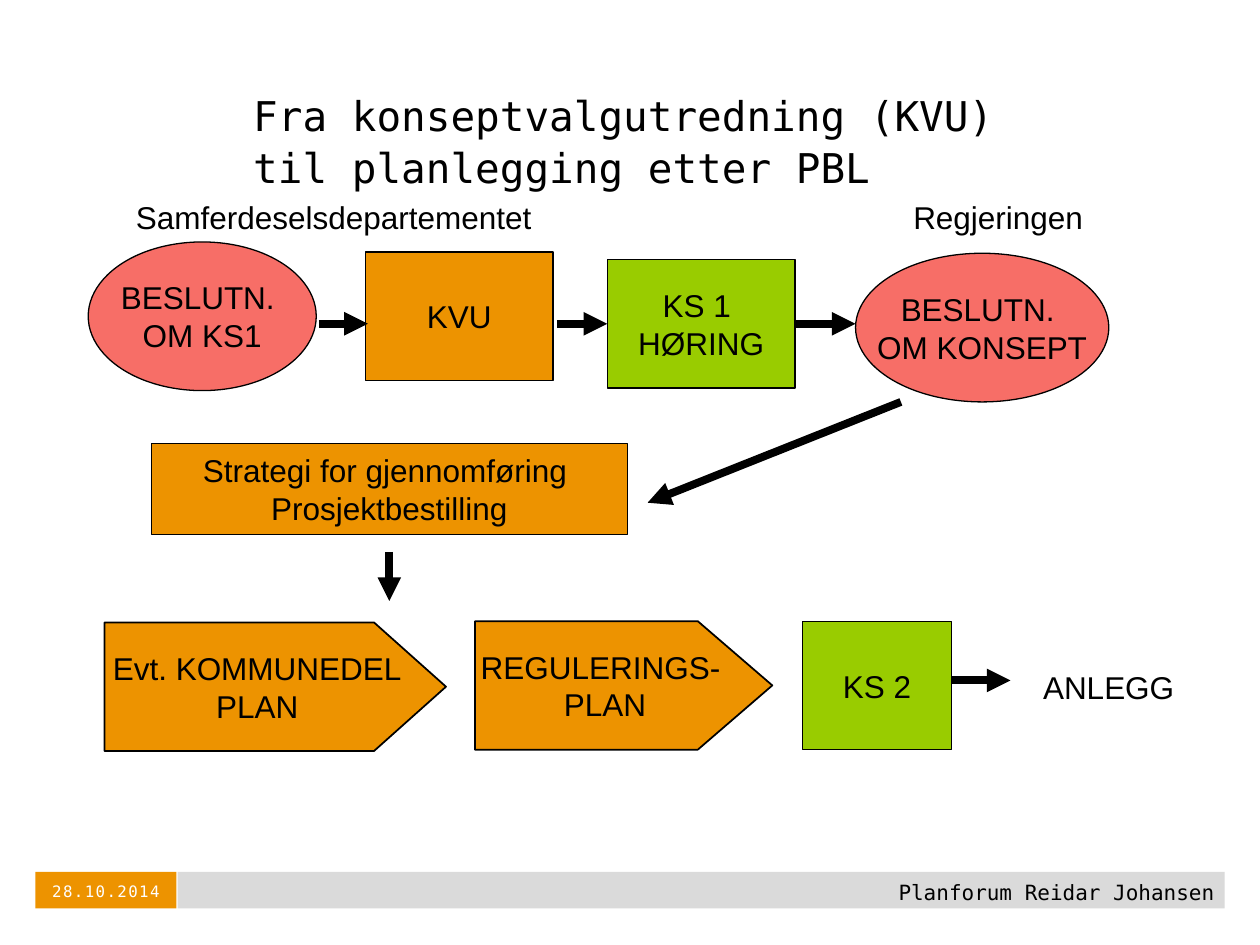
from lxml.etree import SubElement
from pptx import Presentation
from pptx.dml.color import RGBColor
from pptx.enum.shapes import MSO_CONNECTOR, MSO_SHAPE
from pptx.enum.text import MSO_ANCHOR, PP_ALIGN
from pptx.oxml.ns import qn
from pptx.util import Inches, Pt

BLACK = RGBColor(0x00, 0x00, 0x00)
WHITE = RGBColor(0xFF, 0xFF, 0xFF)
GREY = RGBColor(0xDA, 0xDA, 0xDA)
ORANGE = RGBColor(0xED, 0x93, 0x00)
GREEN = RGBColor(0x99, 0xCC, 0x00)
RED = RGBColor(0xF7, 0x6E, 0x67)
MONO = "DejaVu Sans Mono"


class Deck:
    body = {"name": "Arial", "size": Pt(18)}

    def __init__(self, s):
        self.s = s

    def set_text(self, sp, lines, align, color=BLACK, wrap=False, spacing=None, **font):
        tf = sp.text_frame
        tf.word_wrap = wrap
        for i, line in enumerate(lines):
            p = tf.add_paragraph() if i else tf.paragraphs[0]
            p.alignment = align
            if spacing:
                p.line_spacing = spacing
            r = p.add_run()
            r.text = line
            for key, value in {**self.body, **font}.items():
                setattr(r.font, key, value)
            r.font.color.rgb = color
        return tf

    def shape(self, kind, box, fill, lines=(), line=0.75, adj=None):
        sp = self.s.shapes.add_shape(kind, *map(Inches, box))
        sp.shadow.inherit = False
        sp.fill.solid()
        sp.fill.fore_color.rgb = fill
        if line:
            sp.line.color.rgb = BLACK
            sp.line.width = Pt(line)
        else:
            sp.line.fill.background()
        if adj:
            sp.adjustments[0] = adj
        if lines:
            tf = self.set_text(sp, lines, PP_ALIGN.CENTER)
            tf.vertical_anchor = MSO_ANCHOR.MIDDLE
        return sp

    def label(self, box, text):
        sp = self.s.shapes.add_textbox(*map(Inches, box))
        self.set_text(sp, [text], PP_ALIGN.LEFT)

    def framed(self, box, lines, align, top=0, anchor=MSO_ANCHOR.TOP, **style):
        sp = self.s.shapes.add_textbox(*map(Inches, box))
        tf = self.set_text(sp, lines, align, wrap=True, name=MONO, **style)
        margins = {"margin_left": 0, "margin_right": 0, "margin_top": Inches(top),
                   "margin_bottom": 0, "vertical_anchor": anchor}
        for key, value in margins.items():
            setattr(tf, key, value)
        return tf

    def arrow(self, start, end, begin=None, finish=None):
        c = self.s.shapes.add_connector(MSO_CONNECTOR.STRAIGHT, *map(Inches, start + end))
        c.line.color.rgb = BLACK
        c.line.width = Pt(4.5)
        SubElement(c.line._get_or_add_ln(), qn("a:tailEnd"), type="triangle")
        SubElement(c._element.spPr, qn("a:effectLst"))
        if begin:
            c.begin_connect(begin, 3)
        if finish:
            c.end_connect(finish, 1)


def main():
    prs = Presentation()
    prs.slide_width, prs.slide_height = Inches(10), Inches(7.5)
    d = Deck(prs.slides.add_slide(prs.slide_layouts[6]))
    rect, oval, plate = MSO_SHAPE.RECTANGLE, MSO_SHAPE.OVAL, MSO_SHAPE.PENTAGON

    d.shape(rect, (1.41, 6.92, 8.31, 0.29), GREY, line=0)
    d.shape(rect, (0.28, 6.92, 1.12, 0.29), ORANGE, line=0)
    d.framed((2.01, 0.3, 6.99, 1.25),
             ["Fra konseptvalgutredning (KVU)", "til planlegging etter PBL"],
             PP_ALIGN.LEFT, top=0.4, size=Pt(23.4), spacing=1.05)

    d.label((0.98, 1.52, 3.44, 0.4), "Samferdeselsdepartementet")
    d.label((7.15, 1.52, 1.56, 0.4), "Regjeringen")

    d.shape(oval, (0.7, 1.92, 1.81, 1.18), RED, ["BESLUTN. ", "OM KS1"])
    d.shape(rect, (2.9, 2, 1.49, 1.02), ORANGE, ["KVU"])
    ks1 = d.shape(rect, (4.82, 2.06, 1.49, 1.02), GREEN, ["KS 1 ", "HØRING"])
    d.shape(oval, (6.79, 2.01, 2.01, 1.18), RED, ["BESLUTN. ", "OM KONSEPT"])
    d.shape(rect, (1.2, 3.52, 3.78, 0.72), ORANGE,
            ["Strategi for gjennomføring ", "Prosjektbestilling"])
    d.shape(plate, (0.83, 4.94, 2.71, 1.02), ORANGE, ["Evt. KOMMUNEDEL", "PLAN"], 1, 0.56)
    d.shape(plate, (3.77, 4.93, 2.36, 1.02), ORANGE, ["REGULERINGS- ", "PLAN"], 1, 0.58)
    d.shape(rect, (6.37, 4.93, 1.18, 1.02), GREEN, ["KS 2"])
    d.label((8.18, 5.25, 1.24, 0.4), "ANLEGG")

    d.arrow((2.53, 2.57), (2.92, 2.57))
    d.arrow((4.42, 2.57), (4.82, 2.57), finish=ks1)
    d.arrow((6.31, 2.57), (6.79, 2.57), begin=ks1)
    d.arrow((7.15, 3.19), (5.14, 3.99))
    d.arrow((3.09, 4.38), (3.09, 4.77))
    d.arrow((7.55, 5.4), (8.02, 5.4))

    d.framed((1.71, 6.98, 7.93, 0.19), ["Planforum Reidar Johansen"],
             PP_ALIGN.RIGHT, size=Pt(12))
    tf = d.framed((0.28, 6.98, 1.12, 0.19), ["28.10.2014"], PP_ALIGN.CENTER,
                  anchor=MSO_ANCHOR.MIDDLE, size=Pt(9), color=WHITE)
    tf.paragraphs[0].runs[0].font._element.set("spc", "80")
    prs.save("out.pptx")


if __name__ == "__main__":
    main()
